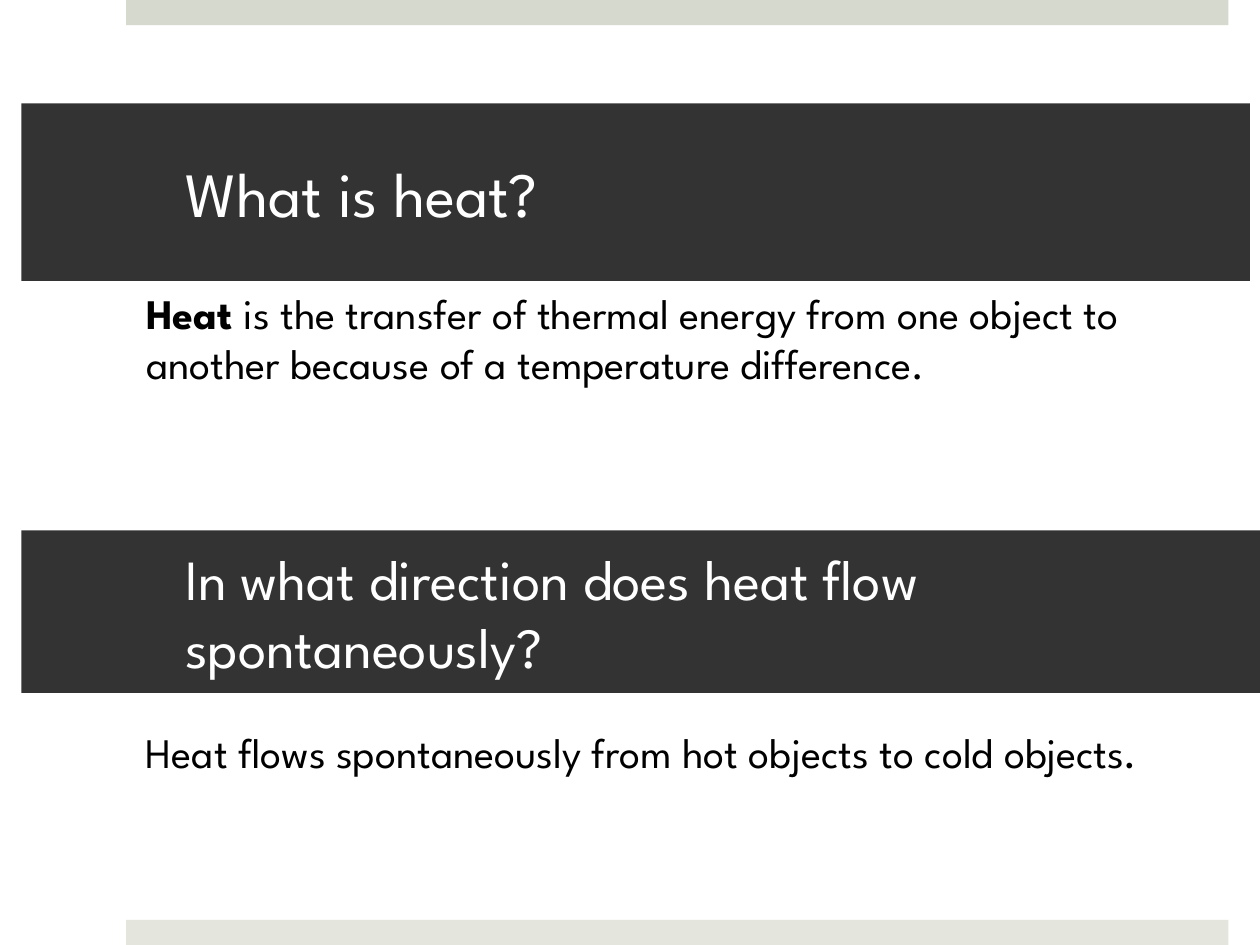
from lxml import etree
from pptx import Presentation
from pptx.dml.color import RGBColor
from pptx.enum.shapes import MSO_SHAPE
from pptx.enum.text import MSO_ANCHOR, MSO_AUTO_SIZE, PP_ALIGN
from pptx.oxml.ns import qn
from pptx.util import Inches, Pt

FONT = "League Spartan"
BLACK = RGBColor(0x00, 0x00, 0x00)
WHITE = RGBColor(0xFF, 0xFF, 0xFF)
CHARCOAL = RGBColor(0x33, 0x33, 0x33)
SAGE = RGBColor(0xD6, 0xD9, 0xCD)
PALE_SAGE = RGBColor(0xE4, 0xE6, 0xDE)


def place(sp, box):
    sp.left, sp.top, sp.width, sp.height = (Inches(v) for v in box)


def add_bar(slide, box, color):
    sp = slide.shapes.add_shape(MSO_SHAPE.RECTANGLE, *(Inches(v) for v in box))
    sp.shadow.inherit = False
    sp.fill.solid()
    sp.fill.fore_color.rgb = color
    sp.line.fill.background()
    return sp


def set_font(p, size, color):
    p.font.name = FONT
    p.font.size = Pt(size)
    p.font.color.rgb = color


def format_question(sp, text, size):
    """Write a question in white on a dark band, indented from its left edge."""
    sp.fill.solid()
    sp.fill.fore_color.rgb = CHARCOAL
    tf = sp.text_frame
    tf.word_wrap = True
    tf.auto_size = MSO_AUTO_SIZE.NONE
    tf.vertical_anchor = MSO_ANCHOR.MIDDLE
    tf.margin_left, tf.margin_right = Inches(1.3), Inches(0.3)
    tf.margin_top = tf.margin_bottom = Inches(0.05)
    p = tf.paragraphs[0]
    p.text = text
    p.alignment = PP_ALIGN.LEFT
    set_font(p, size, WHITE)


def add_answer(sp, runs, space_before):
    """Fill a box with one unbulleted paragraph of (text, bold, size) runs."""
    tf = sp.text_frame
    tf.word_wrap = True
    p = tf.paragraphs[0]
    p.space_before = Pt(space_before)
    set_font(p, 24, BLACK)
    for text, bold, size in runs:
        r = p.add_run()
        r.text = text
        r.font.bold = bold
        if size:
            r.font.size = Pt(size)
    return p


def remove_bullet(p):
    pPr = p._p.get_or_add_pPr()
    pPr.set("marL", "0")
    pPr.set("indent", "0")
    bullet = etree.Element(qn("a:buNone"))
    pPr.insert_element_before(bullet, "a:tabLst", "a:defRPr", "a:extLst")


def build_heat_slide(prs):
    slide = prs.slides.add_slide(prs.slide_layouts[1])
    add_bar(slide, (1, 0, 8.75, 0.2), SAGE)
    add_bar(slide, (1, 7.3, 8.75, 0.2), PALE_SAGE)

    first_question = add_bar(slide, (0.17, 0.82, 9.75, 1.41), CHARCOAL)
    format_question(first_question, "What is heat?", 36)
    definition = slide.placeholders[1]
    place(definition, (1.06, 2.23, 8.32, 1.55))
    p = add_answer(definition, [
        ("Heat ", True, None),
        ("is the transfer of thermal energy from one object to another "
         "because of a temperature difference.", False, None),
    ], 20)
    remove_bullet(p)

    title = slide.shapes.title
    place(title, (0.17, 4.21, 9.83, 1.29))
    format_question(title, "In what direction does heat flow spontaneously?", 32.4)
    direction = slide.shapes.add_textbox(
        Inches(1.06), Inches(5.72), Inches(8.05), Inches(0.91))
    add_answer(direction, [
        ("Heat flows spontaneously from hot objects to cold objects", False, None),
        (".", True, 18),
    ], 4.8)


def main():
    prs = Presentation()
    prs.slide_width, prs.slide_height = Inches(10), Inches(7.5)
    build_heat_slide(prs)
    prs.save("out.pptx")


if __name__ == "__main__":
    main()
